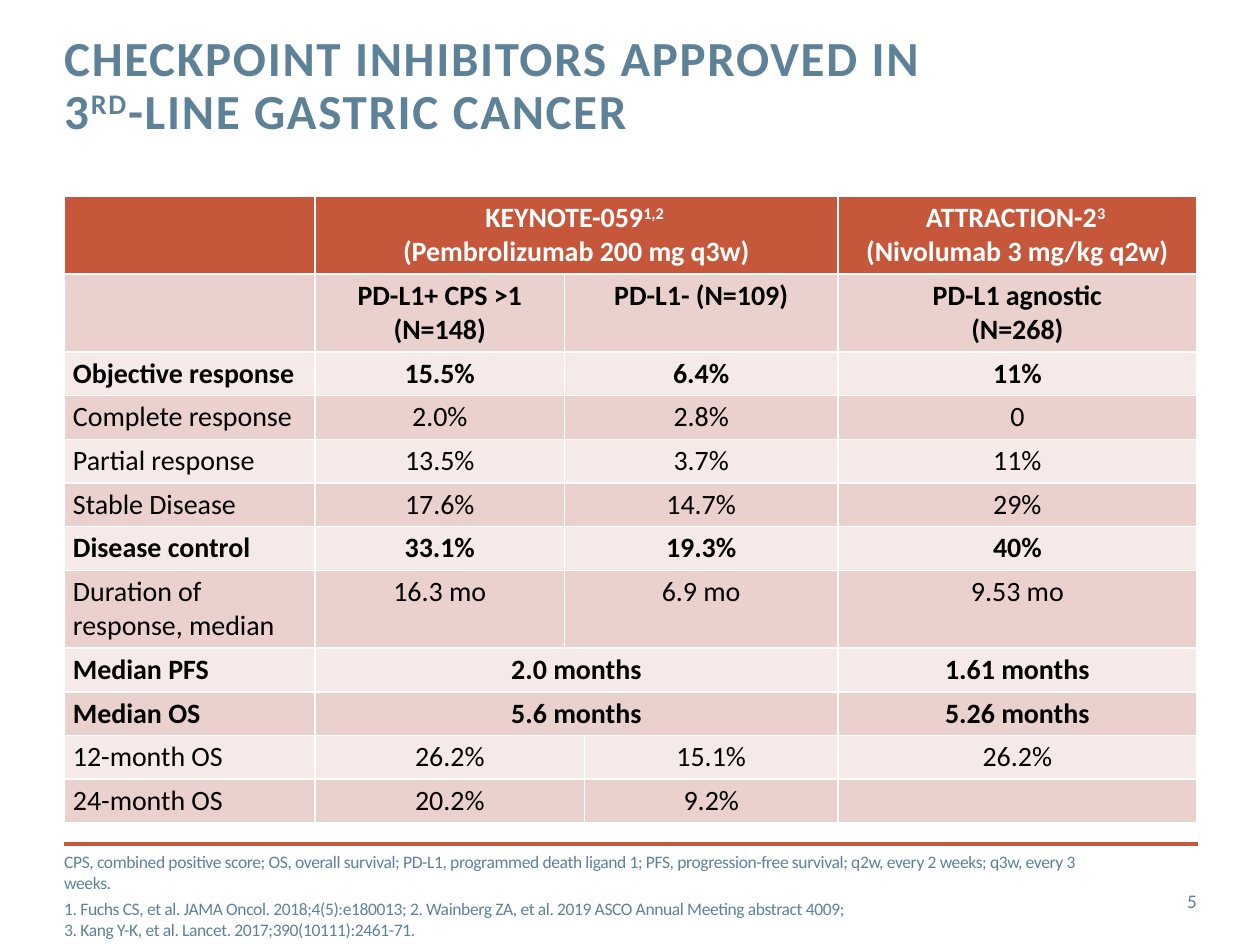
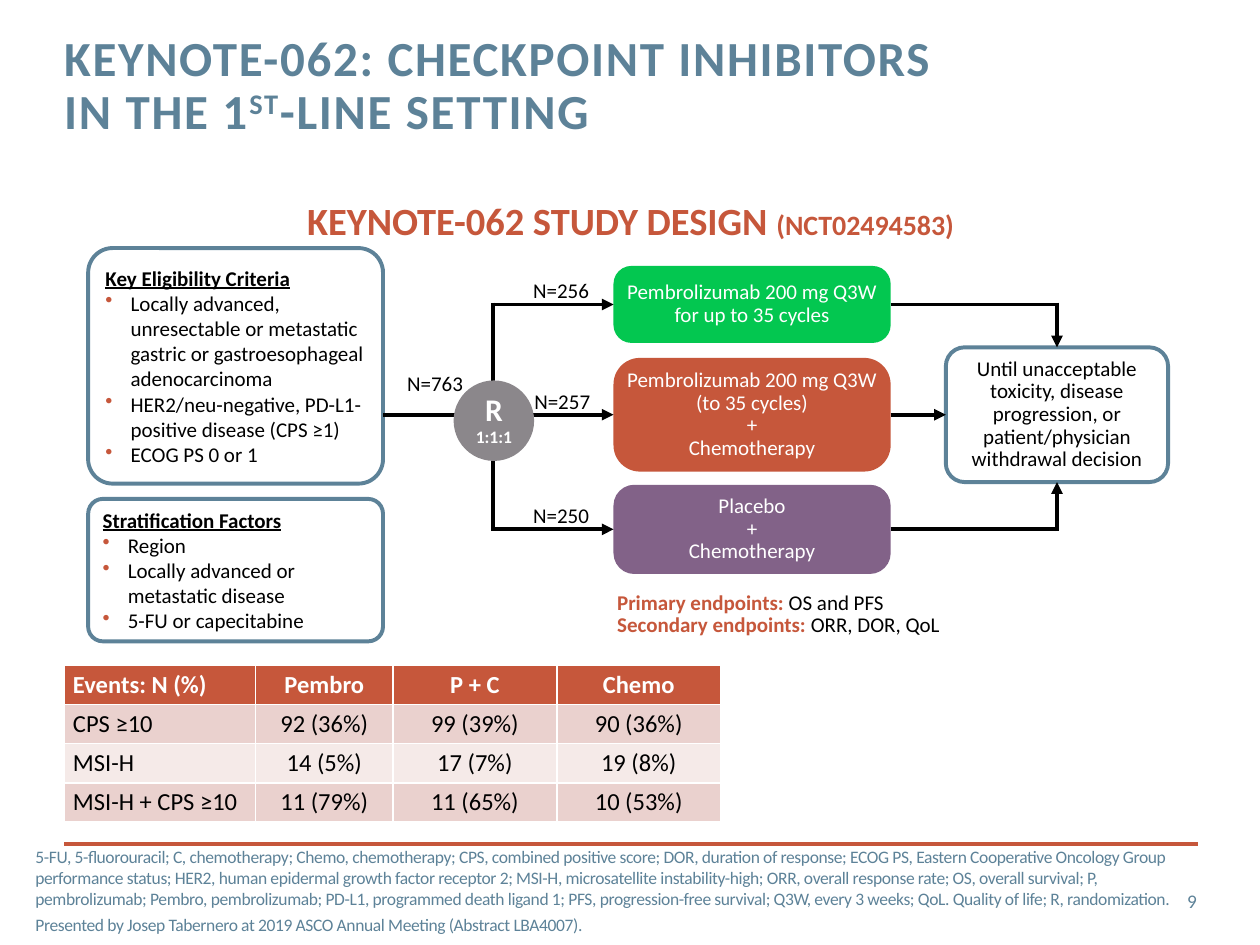
import copy

from lxml import etree
from pptx import Presentation
from pptx import util as u
from pptx.dml.color import RGBColor
from pptx.enum import shapes, text
from pptx.oxml.ns import qn

Pt = u.Pt
AL = text.PP_ALIGN
AN = text.MSO_ANCHOR
SH = shapes.MSO_SHAPE
COLORS = {
    "white": "FFFFFF", "black": "000000", "slate": "5D8298", "rust": "C6573B",
    "rose": "EAD1CE", "blush": "F5EAE8", "gray": "8B878B", "green": "03C750",
    "purple": "826288",
}
C = {name: RGBColor.from_string(value) for name, value in COLORS.items()}


def write(tf, paras, size, color="black", bold=False, align=AL.LEFT, anchor=AN.TOP,
          inset=(0, 0, 0, 0), wrap=True, leading=None, before=0, spc=0, bullets=False):
    tf.auto_size = text.MSO_AUTO_SIZE.NONE
    tf.word_wrap = wrap
    tf.vertical_anchor = anchor
    tf.margin_left, tf.margin_top, tf.margin_right, tf.margin_bottom = map(Pt, inset)
    for i, runs in enumerate(paras):
        p = tf.paragraphs[0] if i == 0 else tf.add_paragraph()
        pPr = p._p.get_or_add_pPr()
        pPr.set("marL", str(Pt(14.4) if bullets else 0))
        pPr.set("indent", str(Pt(-14.4) if bullets else 0))
        if bullets and i > 0:
            clr = etree.SubElement(pPr, qn("a:buClr"))
            etree.SubElement(clr, qn("a:srgbClr"), val=COLORS["rust"])
            etree.SubElement(pPr, qn("a:buChar"), char="•")
        else:
            etree.SubElement(pPr, qn("a:buNone"))
        p.alignment = align
        p.space_before = Pt(before if i else 0)
        if leading:
            p.line_spacing = leading
        for run in [runs] if isinstance(runs, str) else runs:
            words, opts = (run, {}) if isinstance(run, str) else run
            for n, piece in enumerate(words.split("\n")):
                if n:
                    p.add_line_break()
                    p._p[-1].append(copy.deepcopy(r._r.rPr))
                r = p.add_run()
                r.text = piece
                r.font.name = "Calibri"
                r.font.size = Pt(opts.get("size", size))
                r.font.bold = opts.get("bold", bold)
                r.font.underline = opts.get("underline", False)
                r.font.color.rgb = C[opts.get("color", color)]
                if spc:
                    r._r.rPr.set("spc", str(spc))
                if "raised" in opts:
                    r._r.rPr.set("baseline", "30000")


def connect(s, x1, y1, x2, y2, color="black", width=2.25, arrow=False, begin=None, end=None):
    cx = s.shapes.add_connector(shapes.MSO_CONNECTOR.STRAIGHT, Pt(x1), Pt(y1), Pt(x2), Pt(y2))
    if begin:
        cx.begin_connect(*begin)
    if end:
        cx.end_connect(*end)
    cx.line.color.rgb = C[color]
    cx.line.width = Pt(width)
    if arrow:
        etree.SubElement(cx.line._get_or_add_ln(), qn("a:tailEnd"), type="triangle")
    etree.SubElement(cx._element.spPr, qn("a:effectLst"))


RAISED = {"raised": True}
HEAD = {"bold": True, "underline": True}
LABEL = {"bold": True, "color": "rust"}

pages = [
    dict(number="5", layout=1,
         title=["CHECKPOINT INHIBITORS APPROVED IN 3", ("RD", RAISED), "-LINE GASTRIC CANCER"],
         notes_box=(36.7, 489.6, 601.2, 44),
         notes=["CPS, combined positive score; OS, overall survival; PD-L1, programmed death ligand 1; "
                "PFS, progression-free survival; q2w, every 2 weeks; q3w, every 3 weeks.",
                "1. Fuchs CS, et al. JAMA Oncol. 2018;4(5):e180013; 2. Wainberg ZA, et al. 2019 ASCO "
                "Annual Meeting abstract 4009; \n3. Kang Y-K, et al. Lancet. 2017;390(10111):2461-71."],
         table_top=112.3, cols=[143.3, 142.6, 11.5, 144.7, 205.2],
         heights=[44.4, 44.4] + [25] * 5 + [44.4] + [25] * 4, size=16, bold_rows={0, 1, 2, 6, 8, 9},
         rows=[
             ["", [["KEYNOTE-059", ("1,2 ", RAISED)], "(Pembrolizumab 200 mg q3w)"], None, None,
              [["ATTRACTION-2", ("3 ", RAISED)], "(Nivolumab 3 mg/kg q2w)"]],
             ["", "PD-L1+ CPS >1 (N=148)", "PD-L1- (N=109)", None, ["PD-L1 agnostic", "(N=268)"]],
             ["Objective response", "15.5%", "6.4%", None, "11%"],
             ["Complete response", "2.0%", "2.8%", None, "0"],
             ["Partial response", "13.5%", "3.7%", None, "11%"],
             ["Stable Disease", "17.6%", "14.7%", None, "29%"],
             ["Disease control", "33.1%", "19.3%", None, "40%"],
             ["Duration of response, median", "16.3 mo", "6.9 mo", None, "9.53 mo"],
             ["Median PFS", "2.0 months", None, None, "1.61 months"],
             ["Median OS", "5.6 months", None, None, "5.26 months"],
             ["12-month OS", "26.2%", None, "15.1%", "26.2%"],
             ["24-month OS", "20.2%", None, "9.2%", ""],
         ]),
    dict(number="9", layout=3,
         title=["KEYNOTE-062: CHECKPOINT INHIBITORS IN THE 1", ("ST", RAISED), "-LINE SETTING"],
         notes_box=(20.2, 486.7, 658, 44),
         notes=["5-FU, 5-fluorouracil; C, chemotherapy; Chemo, chemotherapy; CPS, combined positive score; "
                "DOR, duration of response; ECOG PS, Eastern Cooperative Oncology Group performance status; "
                "HER2, human epidermal growth factor receptor 2; MSI-H, microsatellite instability-high; "
                "ORR, overall response rate; OS, overall survival; P, pembrolizumab; Pembro, pembrolizumab; "
                "PD-L1, programmed death ligand 1; PFS, progression-free survival; Q3W, every 3 weeks; "
                "QoL. Quality of life; R, randomization.",
                "Presented by Josep Tabernero at 2019 ASCO Annual Meeting (Abstract LBA4007)."],
         table_top=380.2, cols=[109.4, 78.5, 93.6, 93.6], heights=[22.4] * 4, size=14, bold_rows={0},
         rows=[
             ["Events: N (%)", "Pembro", "P + C", "Chemo"],
             ["CPS ≥10", "92 (36%)", "99 (39%)", "90 (36%)"],
             ["MSI-H", "14 (5%)", "17 (7%)", "19 (8%)"],
             ["MSI-H + CPS ≥10", "11 (79%)", "11 (65%)", "10 (53%)"],
         ]),
]

prs = Presentation()
prs.slide_width, prs.slide_height = Pt(720), Pt(540)

for page in pages:
    s = prs.slides.add_slide(prs.slide_layouts[page["layout"]])
    connect(s, 36.7, 482.4, 684.7, 482.4, "rust", 2)

    title = s.shapes.title
    title.left, title.top, title.width, title.height = map(Pt, (36.7, 19.4, 516.2, 63.4))
    write(title.text_frame, [page["title"]], 28, "slate", True, leading=Pt(30), spc=100)

    notes = s.placeholders[1]
    notes.left, notes.top, notes.width, notes.height = map(Pt, page["notes_box"])
    write(notes.text_frame, page["notes"], 10, "slate", anchor=AN.MIDDLE, before=3, spc=-20)

    number = s.shapes.add_textbox(Pt(638), Pt(500.4), Pt(46), Pt(28.8))
    write(number.text_frame, [page["number"]], 11, "slate", align=AL.RIGHT, anchor=AN.MIDDLE)

    rows, cols = page["rows"], page["cols"]
    table = s.shapes.add_table(len(rows), len(cols), Pt(36.7), Pt(page["table_top"]),
                               Pt(sum(cols)), Pt(sum(page["heights"]))).table
    for column, width in zip(table.columns, cols):
        column.width = Pt(width)
    for i, row in enumerate(rows):
        table.rows[i].height = Pt(page["heights"][i])
        for j, content in enumerate(row):
            cell = table.cell(i, j)
            cell.margin_left = cell.margin_right = Pt(5)
            cell.margin_top = cell.margin_bottom = Pt(2.6)
            cell.fill.solid()
            cell.fill.fore_color.rgb = C["rust" if i == 0 else "rose" if i % 2 else "blush"]
            if not content:
                etree.SubElement(cell.text_frame.paragraphs[0]._p, qn("a:endParaRPr"),
                                 sz=str(page["size"] * 100))
                continue
            paras = [content] if isinstance(content, str) else content
            write(cell.text_frame, paras, page["size"], "black" if i else "white",
                  i in page["bold_rows"], AL.CENTER if j else AL.LEFT)
            cell.margin_left = cell.margin_right = Pt(5)
            cell.margin_top = cell.margin_bottom = Pt(2.6)
            body_pr = cell.text_frame._txBody.bodyPr
            body_pr.attrib.clear()
            for child in list(body_pr):
                body_pr.remove(child)
            last = j
            while last + 1 < len(row) and row[last + 1] is None:
                last += 1
            if last > j:
                cell.merge(table.cell(i, last))

heading = s.placeholders[2]
heading.left, heading.top, heading.width, heading.height = map(Pt, (36.7, 112.3, 647.3, 26.6))
write(heading.text_frame, [["KEYNOTE-062 STUDY DESIGN ", ("(NCT02494583)", {"size": 16})]],
      22, "rust", True, AL.CENTER)

boxes = {}
panels = [
    ("criteria", (50.4, 141.8, 168.5, 134.6), 0.104, "white", "slate",
     [[("Key Eligibility Criteria", HEAD)],
      "Locally advanced, unresectable or metastatic gastric or gastroesophageal adenocarcinoma",
      "HER2/neu-negative, PD-L1-positive disease (CPS ≥1)", "ECOG PS 0 or 1"]),
    ("factors", (50.4, 285.1, 168.5, 81.4), 0.104, "white", "slate",
     [[("Stratification Factors", HEAD)], "Region", "Locally advanced or metastatic disease",
      "5-FU or capecitabine"]),
    ("pembro", (350.6, 152, 158.4, 44), 0.233, "green", None,
     ["Pembrolizumab 200 mg Q3W", "for up to 35 cycles"]),
    ("combo", (350.6, 204.5, 158.4, 65), 0.233, "rust", None,
     ["Pembrolizumab 200 mg Q3W", "(to 35 cycles)", "+", "Chemotherapy"]),
    ("placebo", (350.6, 277, 158.4, 51), 0.233, "purple", None,
     ["Placebo", "+", "Chemotherapy"]),
    ("outcome", (540.5, 198.5, 127, 77), 0.139, "white", "slate",
     ["Until unacceptable", "toxicity, disease", "progression, or", "patient/physician",
      "withdrawal decision"]),
]
for name, box, corner, fill, line, paras in panels:
    sp = boxes[name] = s.shapes.add_shape(SH.ROUNDED_RECTANGLE, *map(Pt, box))
    sp.adjustments[0] = corner
    sp.shadow.inherit = False
    sp.fill.solid()
    sp.fill.fore_color.rgb = C[fill]
    if line:
        sp.line.color.rgb = C[line]
        sp.line.width = Pt(2.25)
    else:
        sp.line.fill.background()
    if name in ("criteria", "factors"):
        write(sp.text_frame, paras, 12, anchor=AN.MIDDLE, inset=(5.8, 3.6, 2.9, 3.6), bullets=True)
    else:
        write(sp.text_frame, paras, 12, "black" if line else "white", align=AL.CENTER,
              anchor=AN.MIDDLE, inset=(2.9, 3.6, 2.9, 3.6), leading=0.9)

trunk_x, arm_x, stop_x = 281.5, 350.6, 604
pembro_y, combo_y, placebo_y = 174, 237, 302.5
connect(s, trunk_x, pembro_y - 1, trunk_x, placebo_y + 1)
connect(s, 218.9, combo_y, arm_x, combo_y, arrow=True, end=(boxes["combo"], 1))
connect(s, 509, combo_y, 540.5, combo_y, arrow=True,
        begin=(boxes["combo"], 3), end=(boxes["outcome"], 1))
for arm, y, overlap, side in [("pembro", pembro_y, -1, 0), ("placebo", placebo_y, 1, 2)]:
    connect(s, trunk_x, y, arm_x, y, arrow=True, end=(boxes[arm], 1))
    connect(s, 509, y, stop_x, y, begin=(boxes[arm], 3))
    connect(s, stop_x, y + overlap, stop_x, combo_y, arrow=True, end=(boxes["outcome"], side))

randomize = s.shapes.add_shape(SH.OVAL, Pt(259.2), Pt(217.4), Pt(46), Pt(46))
randomize.shadow.inherit = False
randomize.fill.solid()
randomize.fill.fore_color.rgb = C["gray"]
randomize.line.fill.background()
write(randomize.text_frame, ["R", [("1:1:1", {"size": 10})]], 18, "white", True, AL.CENTER,
      AN.MIDDLE, (0, 3.6, 0, 3.6), leading=0.9)

for count, x, y in [("N=763", 232.6, 211.7), ("N=256", 304.6, 158.4),
                    ("N=257", 305.3, 221.8), ("N=250", 304.6, 287.3)]:
    label = s.shapes.add_textbox(Pt(x), Pt(y), Pt(32.4), Pt(14.4))
    write(label.text_frame, [count], 12, wrap=False)

endpoints = s.shapes.add_textbox(Pt(345.6), Pt(334.8), Pt(299.5), Pt(33))
write(endpoints.text_frame, [[("Primary endpoints: ", LABEL), "OS and PFS"],
                             [("Secondary endpoints: ", LABEL), "ORR, DOR, QoL"]],
      12, inset=(7.2, 3.6, 7.2, 3.6), leading=0.9)

prs.save("out.pptx")
